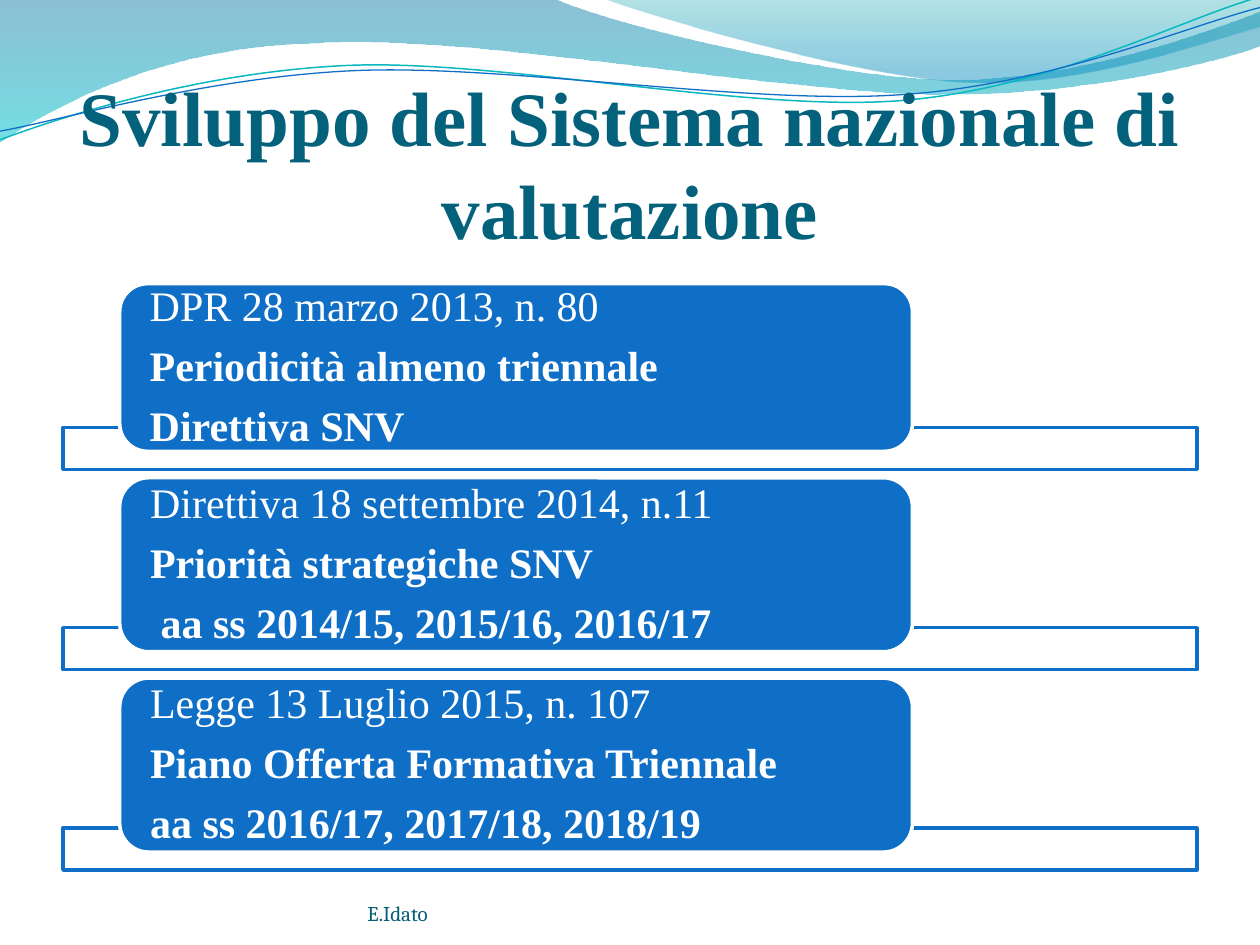
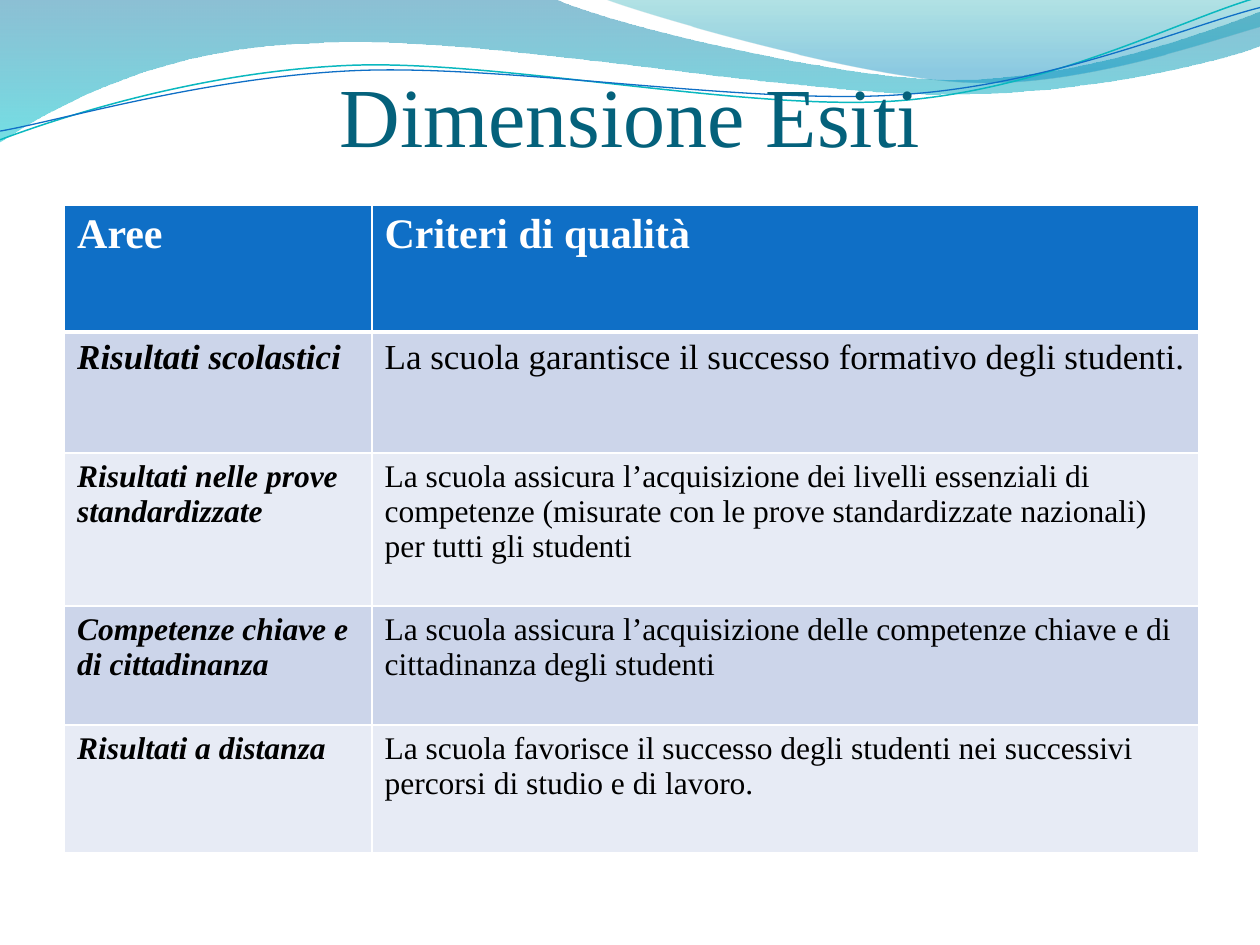
from lxml import etree
from pptx import Presentation
from pptx import util as u
from pptx.dml.color import RGBColor
from pptx.enum import shapes, text
from pptx.oxml import ns

Pt = u.Pt
SERIF, FOOTER_FONT = "Times New Roman", "Cambria"
BLUE, WHITE, BLACK = "0F6FC6", "FFFFFF", "000000"
TITLE_COLOR, FOOTER_COLOR, TEAL = "04617B", "045D75", "0AB8BF"
BAND_FILLS = ["CCD5EA", "E7EBF5"]

WAVES = [
    ((0, 0), [
        [(316.8, -0.7)],
        [(342.7, 12.2), (478.1, 45.4), (545.8, 45.4)],
        [(614.2, 45.4), (689.8, 18.7), (720, 6.5)],
        [(720.7, 25.9)],
        [(707.8, 31.7), (626.4, 54.7), (537.1, 54)],
        [(447.8, 54), (275, 20.2), (185, 24.5)],
        [(92.9, 25.9), (33.1, 59.8), (-0.7, 81.4)],
        [(0, 0)],
    ], [(0, "0074A1", 45), (100, "00C6CF", 55)]),
    ((344.9, -0.7), [
        [(366.5, 7.9), (491, 44.6), (553.7, 46.8)],
        [(616.3, 49.7), (691.9, 23), (720, 15.1)],
        [(720, 0)],
        [(344.9, -0.7)],
    ], [(0, "00A1A9", 30), (80, "008BBF", 45)]),
]
STROKES = [
    ((0, 79.9), [
        [(34.6, 67), (113.8, 41), (199.4, 37.4)],
        [(284.4, 33.8), (427, 64.1), (513.4, 57.6)],
        [(599.8, 51.1), (675.4, 10.8), (718.6, -1.4)],
    ], TEAL, 0.85),
    ((0, 74.9), [
        [(33.8, 69.1), (118.1, 43.9), (203.8, 40.3)],
        [(290.2, 36.7), (429.8, 60.5), (516.2, 54)],
        [(601.9, 48.2), (677.5, 15.1), (720, 4.3)],
    ], BLUE, 0.75),
]

LAWS = [
    (95.8, ["DPR 28 marzo 2013, n. 80", "Periodicità almeno triennale", "Direttiva SNV"]),
    (99.4, ["Direttiva 18 settembre 2014, n.11", "Priorità strategiche SNV",
            " aa ss 2014/15, 2015/16, 2016/17"]),
    (99.4, ["Legge 13 Luglio 2015, n. 107", "Piano Offerta Formativa Triennale",
            "aa ss 2016/17, 2017/18, 2018/19"]),
]
CRITERIA = [
    (72.8, 24, "Aree", "Criteri di qualità"),
    (69, 20, "Risultati scolastici", "La scuola garantisce il successo formativo degli studenti."),
    (87.5, 18, "Risultati nelle prove standardizzate",
     "La scuola assicura l’acquisizione dei livelli essenziali di competenze "
     "(misurate con le prove standardizzate nazionali) per tutti gli studenti"),
    (68, 18, "Competenze chiave e di cittadinanza",
     "La scuola assicura l’acquisizione delle competenze chiave e di cittadinanza degli studenti"),
    (73, 18, "Risultati a distanza",
     "La scuola favorisce il successo degli studenti nei successivi percorsi di studio e di lavoro."),
]


def rgb(color):
    """Turn a hex string into a colour."""
    return RGBColor.from_string(color)


def apply(obj, **values):
    """Set each given attribute on an object."""
    for name, value in values.items():
        setattr(obj, name, value)


def child(parent, tag, **attrs):
    """Append a DrawingML element."""
    return etree.SubElement(parent, ns.qn(tag), {k: str(v) for k, v in attrs.items()})


def write(p, words, size, color, name=SERIF, bold=False, italic=False):
    """Add one formatted run to a paragraph."""
    r = p.add_run()
    r.text = words
    apply(r.font, size=Pt(size), name=name, bold=bold, italic=italic)
    r.font.color.rgb = rgb(color)


def setup_frame(tf, anchor, left=0, top=0, right=0, bottom=0):
    """Set wrapping, anchor and insets of a text frame."""
    apply(tf, word_wrap=True, auto_size=text.MSO_AUTO_SIZE.NONE, vertical_anchor=anchor,
          margin_left=Pt(left), margin_top=Pt(top), margin_right=Pt(right),
          margin_bottom=Pt(bottom))


def style_shape(sp, fill=None, line=None, width=0):
    """Give a shape a flat fill and line without a shadow."""
    sp.shadow.inherit = False
    for part, color in ((sp.fill, fill), (sp.line.fill, line)):
        if color:
            part.solid()
            part.fore_color.rgb = rgb(color)
        else:
            part.background()
    if line:
        sp.line.width = Pt(width)


def add_outline(slide, start, segments, close):
    """Draw a freeform whose three-point segments are cubic curves."""
    builder = slide.shapes.build_freeform(*map(Pt, start))
    builder.add_line_segments([tuple(map(Pt, point)) for segment in segments
                               for point in segment], close=close)
    sp = builder.convert_to_shape()
    line_steps = iter(list(sp._element.iter(ns.qn("a:lnTo"))))
    for segment in segments:
        steps = [next(line_steps) for _ in segment]
        if len(steps) == 3:
            curve = etree.Element(ns.qn("a:cubicBezTo"))
            steps[0].addprevious(curve)
            for step in steps:
                curve.append(step[0])
                step.getparent().remove(step)
    return sp


def fade(sp, stops):
    """Fill a shape with a translucent downward gradient."""
    grad = etree.Element(ns.qn("a:gradFill"), rotWithShape="1")
    stop_list = child(grad, "a:gsLst")
    for pos, color, opacity in stops:
        clr = child(child(stop_list, "a:gs", pos=pos * 1000), "a:srgbClr", val=color)
        child(clr, "a:alpha", val=opacity * 1000)
    child(grad, "a:lin", ang=5400000, scaled=0)
    old = sp._element.spPr.find(ns.qn("a:noFill"))
    old.getparent().replace(old, grad)


def decorate_layout(layout, slide):
    """Draw the wave band and move it to the back of the layout."""
    band = []
    for start, segments, stops in WAVES:
        sp = add_outline(slide, start, segments, True)
        style_shape(sp)
        fade(sp, stops)
        band.append(sp)
    for start, segments, color, width in STROKES:
        sp = add_outline(slide, start, segments, False)
        style_shape(sp, line=color, width=width)
        band.append(sp)
    for i, sp in enumerate(band):
        layout.shapes.element.insert(2 + i, sp._element)


def set_title(slide, words, top, height, size, bold=False):
    """Place and format the slide title."""
    sp = slide.shapes.title
    apply(sp, left=Pt(36), top=Pt(top), width=Pt(648), height=Pt(height))
    setup_frame(sp.text_frame, text.MSO_ANCHOR.BOTTOM, top=3.6)
    p = sp.text_frame.paragraphs[0]
    p.alignment = text.PP_ALIGN.CENTER
    write(p, words, size, TITLE_COLOR, bold=bold)


def add_footer(slide, words, left, top, width, height):
    """Add the footer line."""
    tf = slide.shapes.add_textbox(Pt(left), Pt(top), Pt(width), Pt(height)).text_frame
    setup_frame(tf, text.MSO_ANCHOR.BOTTOM)
    write(tf.paragraphs[0], words, 12, FOOTER_COLOR, FOOTER_FONT)


def add_law_list(slide, left, top, width, pitch=114.5):
    """Stack the laws, each as a rounded box over a wide bar."""
    for i, (height, lines) in enumerate(LAWS):
        bar_top = top + i * pitch
        bar = slide.shapes.add_shape(shapes.MSO_SHAPE.RECTANGLE, Pt(left), Pt(bar_top),
                                     Pt(width), Pt(24))
        style_shape(bar, WHITE, BLUE, 2)
        box = slide.shapes.add_shape(shapes.MSO_SHAPE.ROUNDED_RECTANGLE, Pt(left + 32.4),
                                     Pt(bar_top + 13.7 - height), Pt(453), Pt(height))
        style_shape(box, BLUE, WHITE, 2)
        tf = box.text_frame
        setup_frame(tf, text.MSO_ANCHOR.MIDDLE, left=12.5, right=12.5)
        for j, words in enumerate(lines):
            p = tf.add_paragraph() if j else tf.paragraphs[0]
            apply(p, alignment=text.PP_ALIGN.LEFT, line_spacing=0.9, space_after=Pt(8.4))
            write(p, words, 24, WHITE, bold=j > 0)


def set_borders(cell, **widths):
    """Draw white borders of the given widths on a cell."""
    tc_pr = cell._tc.get_or_add_tcPr()
    for i, side in enumerate("LRTB"):
        ln = child(tc_pr, f"a:ln{side}", w=Pt(widths.get(side, 1)))
        child(child(ln, "a:solidFill"), "a:srgbClr", val=WHITE)
        tc_pr.insert(i, ln)


def add_criteria_table(slide, left, top, width):
    """Add the table of areas and quality criteria."""
    height = sum(row[0] for row in CRITERIA)
    table = slide.shapes.add_table(len(CRITERIA), 2, Pt(left), Pt(top),
                                   Pt(width), Pt(height)).table
    area_width = 175.7
    for column, w in zip(table.columns, (area_width, width - area_width)):
        column.width = Pt(w)
    for i, (row_height, size, *words) in enumerate(CRITERIA):
        table.rows[i].height = Pt(row_height)
        header = i == 0
        for j, content in enumerate(words):
            cell = table.cell(i, j)
            cell.fill.solid()
            cell.fill.fore_color.rgb = rgb(BLUE if header else BAND_FILLS[(i - 1) % 2])
            set_borders(cell, B=3 if header else 1, T=3 if i == 1 else 1)
            write(cell.text_frame.paragraphs[0], content, size, WHITE if header else BLACK,
                  bold=header or j == 0, italic=not header and j == 0)


def build_laws_slide(slide):
    """Build the slide on the development of the evaluation system."""
    set_title(slide, "Sviluppo del Sistema nazionale di valutazione", 31.7, 113.8, 44, bold=True)
    add_law_list(slide, 36, 244.2, 648)
    add_footer(slide, "E.Idato", 210, 500.4, 264, 28.8)


def build_criteria_slide(slide):
    """Build the slide on the outcomes dimension."""
    set_title(slide, "Dimensione Esiti", 26, 68, 48)
    add_criteria_table(slide, 36.9, 117, 648)


def main():
    """Build and save the presentation."""
    prs = Presentation()
    apply(prs, slide_width=Pt(720), slide_height=Pt(540))
    layout = prs.slide_layouts[5]
    slides = [prs.slides.add_slide(layout) for _ in range(2)]
    decorate_layout(layout, slides[0])
    build_laws_slide(slides[0])
    build_criteria_slide(slides[1])
    prs.save("out.pptx")


if __name__ == "__main__":
    main()
